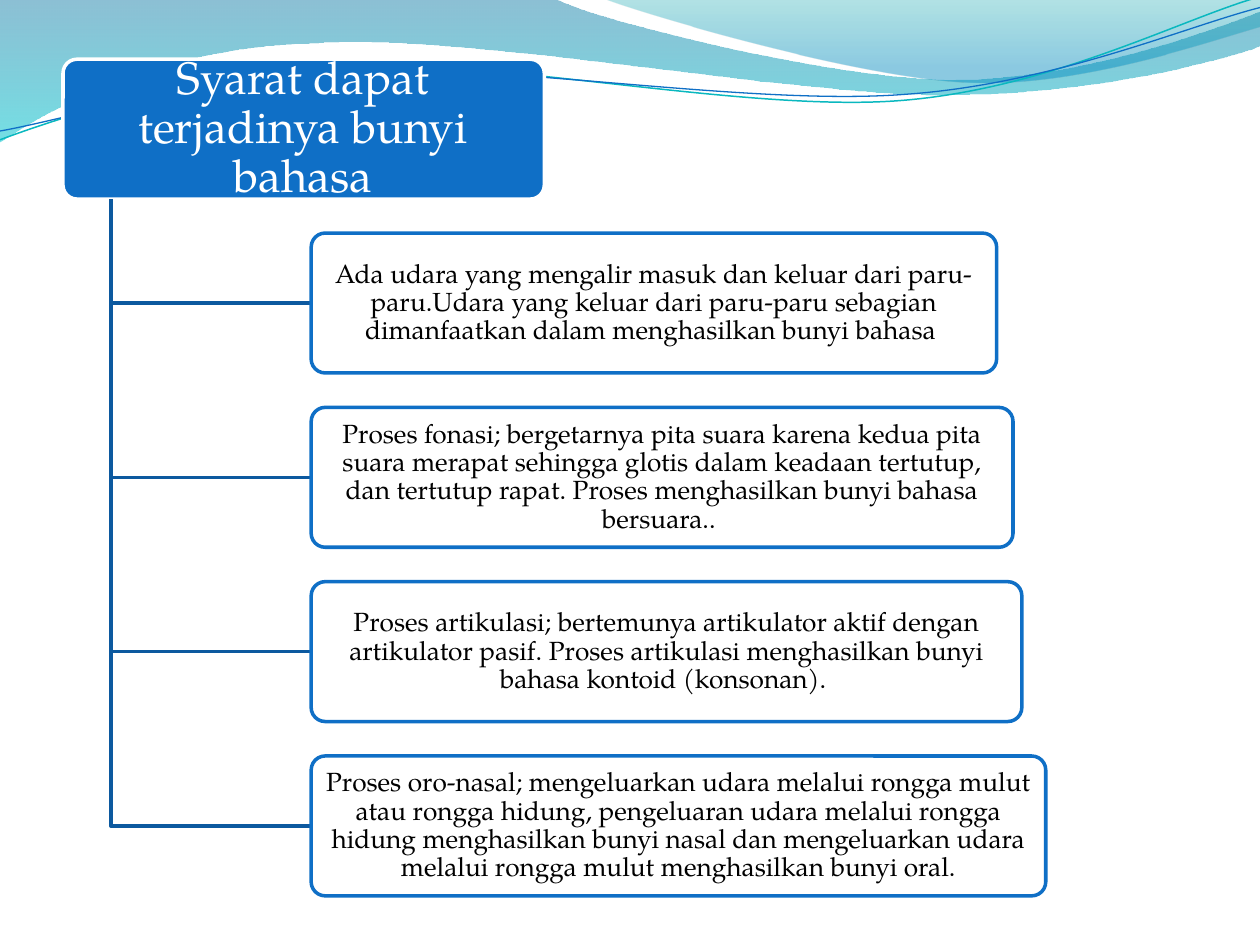
from lxml.etree import SubElement
from pptx import Presentation
from pptx.dml.color import RGBColor
from pptx.enum.shapes import MSO_SHAPE
from pptx.enum.text import MSO_ANCHOR, MSO_AUTO_SIZE, PP_ALIGN
from pptx.oxml.ns import qn
from pptx.util import Inches, Pt

COLORS = {
    "blue": "0F6FC6", "navy": "0C599F", "white": "FFFFFF", "black": "000000",
    "aqua": "0AB8BF", "deep": "0074A1", "cyan": "00C6CF", "teal": "00A1A9",
    "sky": "008BBF",
}
FONT = "TeX Gyre Pagella"
TITLE = "Syarat dapat terjadinya bunyi bahasa"
CONDITIONS = [
    (5.44, "Ada udara yang mengalir masuk dan keluar dari paru-paru.Udara yang keluar dari paru-paru sebagian dimanfaatkan dalam menghasilkan bunyi bahasa "),
    (5.57, "Proses fonasi; bergetarnya pita suara karena kedua pita suara merapat sehingga glotis dalam keadaan tertutup, dan tertutup rapat. Proses menghasilkan bunyi bahasa bersuara.. "),
    (5.64, "Proses artikulasi; bertemunya artikulator aktif dengan artikulator pasif. Proses artikulasi menghasilkan bunyi bahasa kontoid (konsonan). "),
    (5.83, "Proses oro-nasal; mengeluarkan udara melalui rongga mulut atau rongga hidung, pengeluaran udara melalui rongga hidung menghasilkan bunyi nasal dan mengeluarkan udara melalui rongga mulut menghasilkan bunyi oral."),
]
WAVES = [
    ([(0, 0), (4.4, -0.01), (4.76, 0.17, 6.64, 0.63, 7.58, 0.63),
      (8.53, 0.63, 9.58, 0.26, 10, 0.09), (10.01, 0.36),
      (9.83, 0.44, 8.7, 0.76, 7.46, 0.75), (6.22, 0.75, 3.82, 0.28, 2.57, 0.34),
      (1.29, 0.36, 0.46, 0.83, -0.01, 1.13)],
     [("deep", 0, 45), ("cyan", 1, 55)]),
    ([(4.79, -0.01), (5.09, 0.11, 6.82, 0.62, 7.69, 0.65),
      (8.56, 0.69, 9.61, 0.32, 10, 0.21), (10, 0)],
     [("teal", 0, 30), ("sky", 0.8, 45)]),
]
CURVES = [
    ([(0, 1.11), (0.48, 0.93, 1.58, 0.57, 2.77, 0.52),
      (3.95, 0.47, 5.93, 0.89, 7.13, 0.8), (8.33, 0.71, 9.38, 0.15, 9.98, -0.02)],
     "aqua", 0.85),
    ([(0, 1.04), (0.47, 0.96, 1.64, 0.61, 2.83, 0.56),
      (4.03, 0.51, 5.97, 0.84, 7.17, 0.75), (8.36, 0.67, 9.41, 0.21, 10, 0.06)],
     "blue", 0.75),
]


def rgb(name):
    """Return the named colour."""
    return RGBColor.from_string(COLORS[name])


def set_alpha(sp, percents):
    """Set the opacity of the fill colours in order."""
    for clr, percent in zip(sp.element.spPr.iter(qn("a:srgbClr")), percents):
        SubElement(clr, qn("a:alpha")).set("val", str(percent * 1000))


class Deck:
    """Hold the style and the current slide."""

    def __init__(self):
        """Start a deck with one title-only slide."""
        self.prs = Presentation()
        self.prs.slide_width, self.prs.slide_height = Inches(10), Inches(7.5)
        self.s = self.prs.slides.add_slide(self.prs.slide_layouts[5])

    def line(self, sp, color, width):
        """Set the outline of a shape."""
        sp.line.color.rgb = rgb(color)
        sp.line.width = Pt(width)

    def outline(self, steps, close):
        """Add a freeform of straight steps and cubic curve steps."""
        ends = [(Inches(step[-2]), Inches(step[-1])) for step in steps]
        builder = self.s.shapes.build_freeform(*ends[0])
        builder.add_line_segments(ends[1:], close=close)
        sp = builder.convert_to_shape()
        sp.shadow.inherit = False
        segments = list(sp.element.iter(qn("a:lnTo")))
        for segment, step in zip(segments, steps[1:]):
            if len(step) == 6:
                segment.tag = qn("a:cubicBezTo")
                for i in (0, 1):
                    x, y = step[2 * i:2 * i + 2]
                    local = {"x": str(Inches(x) - sp.left), "y": str(Inches(y) - sp.top)}
                    segment.insert(i, segment.makeelement(qn("a:pt"), local))
        return sp

    def wave(self, steps, stops):
        """Add a closed wave with a top-down gradient."""
        sp = self.outline(steps, True)
        sp.line.fill.background()
        sp.fill.gradient()
        sp.fill.gradient_angle = 270
        for stop, (color, position, _) in zip(sp.fill.gradient_stops, stops):
            stop.color.rgb = rgb(color)
            stop.position = position
        set_alpha(sp, [alpha for _, _, alpha in stops])

    def curve(self, steps, color, width):
        """Add an open, unfilled line."""
        sp = self.outline(steps, False)
        sp.fill.background()
        self.line(sp, color, width)

    def box(self, x, y, w, h, fill, line, alpha=100):
        """Add a rounded box."""
        sp = self.s.shapes.add_shape(
            MSO_SHAPE.ROUNDED_RECTANGLE, Inches(x), Inches(y), Inches(w), Inches(h))
        sp.adjustments[0] = 0.1
        sp.shadow.inherit = False
        sp.fill.solid()
        sp.fill.fore_color.rgb = rgb(fill)
        if alpha < 100:
            set_alpha(sp, [alpha])
        self.line(sp, line, 2)
        return sp

    def text(self, sp, text, size, color, dx, dy):
        """Write centred text in a shape."""
        tf = sp.text_frame
        frame = {
            "word_wrap": True, "auto_size": MSO_AUTO_SIZE.NONE,
            "vertical_anchor": MSO_ANCHOR.MIDDLE,
            "margin_left": Inches(dx), "margin_right": Inches(dx),
            "margin_top": Inches(dy), "margin_bottom": Inches(dy),
        }
        for name, value in frame.items():
            setattr(tf, name, value)
        p = tf.paragraphs[0]
        p.alignment, p.line_spacing = PP_ALIGN.CENTER, 0.9
        r = p.add_run()
        r.text = text
        for name, value in {"name": FONT, "size": Pt(size)}.items():
            setattr(r.font, name, value)
        r.font.color.rgb = rgb(color)

    def title(self, text, x, y, w, h):
        """Place the title in front of the shapes drawn so far."""
        sp = self.s.shapes.title
        place = {"left": x, "top": y, "width": w, "height": h}
        for name, value in place.items():
            setattr(sp, name, Inches(value))
        sp.element.getparent().append(sp.element)
        self.text(sp, text, 26, "white", 0.05, 0.04)


def main():
    """Build the slide and save it."""
    deck = Deck()
    for steps, stops in WAVES:
        deck.wave(steps, stops)
    for steps, color, width in CURVES:
        deck.curve(steps, color, width)

    height, left, trunk = 1.11, 2.47, 0.88
    deck.box(0.5, 0.47, 3.82, height, "blue", "white")
    deck.title(TITLE, 0.53, 0.5, 3.75, 1.04)

    first, last = 1.85, 6
    pitch = (last - first) / (len(CONDITIONS) - 1)
    for i, (width, text) in enumerate(CONDITIONS):
        top = first + i * pitch
        middle = top + height / 2
        deck.curve([(trunk, 1.58), (trunk, middle), (left, middle)], "navy", 2)
        sp = deck.box(left, top, width, height, "white", "blue", 90)
        deck.text(sp, text, 15, "black", 0.03, 0.02)
    deck.prs.save("out.pptx")


if __name__ == "__main__":
    main()
